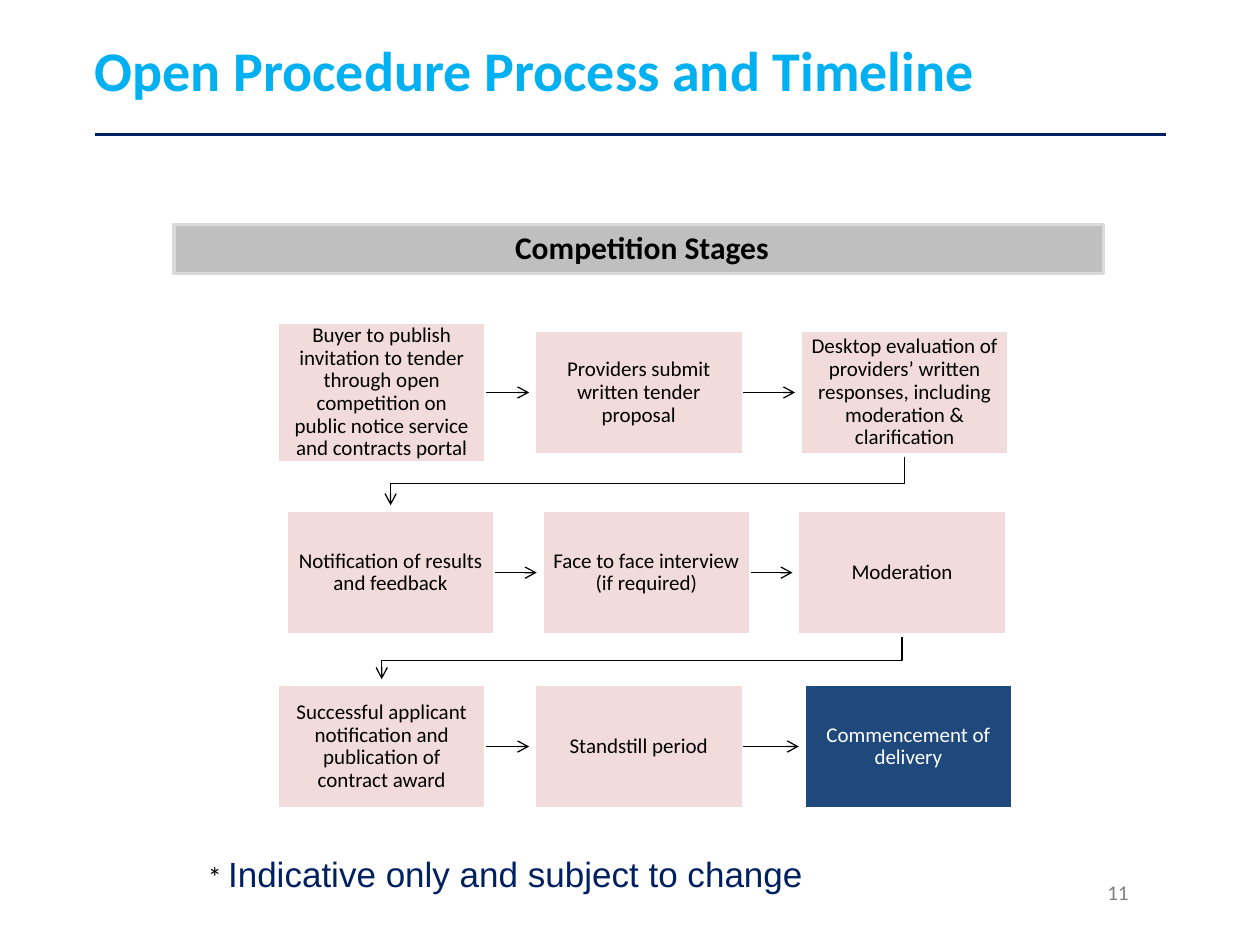
from lxml.etree import SubElement
from pptx import Presentation
from pptx.dml.color import RGBColor
from pptx.enum.shapes import MSO_CONNECTOR as Connector, MSO_SHAPE as Shape
from pptx.enum.text import MSO_ANCHOR as Anchor, MSO_AUTO_SIZE as AutoSize, PP_ALIGN as Align
from pptx.oxml.ns import qn
from pptx.util import Inches, Pt

COLORS = {
    "title": "00B0F0", "navy": "002060", "black": "000000", "white": "FFFFFF",
    "stage": "F2DCDB", "final": "1F497D", "bar": "BFBFBF", "bar_line": "DADADA",
    "number": "808080",
}
SLIDE_WIDTH, SLIDE_HEIGHT = Inches(10), Inches(7.5)
GRID_COLUMNS, GRID_ROWS = 100, 75
STAGE_WIDTH, STAGE_HEIGHT = 16.6, 9.9
ARROW_GAP = 0.4
RIGHT_SIDE = 3

STAGES = [
    (26.2, [
        (22, "Buyer to publish invitation to tender through open competition on "
             "public notice service and contracts portal"),
        (42.4, "Providers submit written tender proposal"),
        (63.5, "Desktop evaluation of providers’ written responses, including "
               "moderation & clarification"),
    ]),
    (40.5, [
        (22.7, "Notification of results and feedback"),
        (43, "Face to face interview (if required)"),
        (63.3, "Moderation"),
    ]),
    (54.3, [
        (22, "Successful applicant notification and publication of contract award"),
        (42.4, "Standstill period"),
        (63.8, "Commencement of delivery"),
    ]),
]
TALL_STAGE, TALL_EXTRA = (0, 0), 1.2
FINAL_STAGE = (2, 2)


def x(column):
    return round(SLIDE_WIDTH * column / GRID_COLUMNS)


def y(row):
    return round(SLIDE_HEIGHT * row / GRID_ROWS)


def area(left, top, width, height):
    return x(left), y(top), x(width), y(height)


def color(name):
    return RGBColor.from_string(COLORS[name])


def set_font(font, size, color_name, bold=False, name="Calibri"):
    font.name, font.size, font.bold = name, Pt(size), bold
    font.color.rgb = color(color_name)


def set_line(line, color_name, width):
    line.color.rgb = color(color_name)
    line.width = Pt(width)


def set_insets(frame, left, top, right, bottom):
    frame.margin_left, frame.margin_right = x(left), x(right)
    frame.margin_top, frame.margin_bottom = y(top), y(bottom)


def add_arrowhead(shape):
    SubElement(shape.line._get_or_add_ln(), qn("a:tailEnd"), type="arrow")


def format_title(slide, text):
    title = slide.shapes.title
    title.left, title.top, title.width, title.height = area(7.5, 1.9, 85, 7.1)
    frame = title.text_frame
    frame.text = text
    frame.vertical_anchor = Anchor.MIDDLE
    set_insets(frame, 0, 0.5, 0.4, 0.5)
    paragraph = frame.paragraphs[0]
    paragraph.alignment = Align.LEFT
    set_font(paragraph.font, 32, "title", bold=True)


def add_line(slide, start, end, color_name, width):
    line = slide.shapes.add_connector(
        Connector.STRAIGHT, x(start[0]), y(start[1]), x(end[0]), y(end[1]))
    set_line(line.line, color_name, width)
    SubElement(line._element.spPr, qn("a:effectLst"))
    return line


def add_rectangle(slide, box, fill, line_color):
    rectangle = slide.shapes.add_shape(Shape.RECTANGLE, *area(*box))
    rectangle.shadow.inherit = False
    rectangle.fill.solid()
    rectangle.fill.fore_color.rgb = color(fill)
    set_line(rectangle.line, line_color, 2)
    return rectangle


def add_stage(slide, box, text, final):
    stage = add_rectangle(slide, box, "final" if final else "stage", "white")
    frame = stage.text_frame
    frame.text = text
    frame.word_wrap = True
    frame.vertical_anchor = Anchor.MIDDLE
    set_insets(frame, 0.9, 0.9, 0.9, 0.9)
    paragraph = frame.paragraphs[0]
    paragraph.alignment = Align.CENTER
    paragraph.line_spacing = 0.9
    set_font(paragraph.font, 12, "white" if final else "black")
    return stage


def add_stage_arrow(slide, stage, start, end):
    arrow = add_line(slide, start, end, "black", 0.75)
    arrow.begin_connect(stage, RIGHT_SIDE)
    add_arrowhead(arrow)


def add_return_arrow(slide, start, end):
    middle = (start[1] + end[1]) / 2 + 0.2
    points = [(start[0], middle), (end[0], middle), end]
    builder = slide.shapes.build_freeform(x(start[0]), y(start[1]))
    builder.add_line_segments([(x(column), y(row)) for column, row in points], close=False)
    arrow = builder.convert_to_shape()
    arrow.shadow.inherit = False
    arrow.fill.background()
    set_line(arrow.line, "black", 0.75)
    add_arrowhead(arrow)


def add_text(slide, box, runs, align=Align.LEFT, wrap=True):
    frame = slide.shapes.add_textbox(*area(*box)).text_frame
    frame.word_wrap = wrap
    frame.auto_size = AutoSize.NONE
    paragraph = frame.paragraphs[0]
    paragraph.alignment = align
    for text, style in runs:
        run = paragraph.add_run()
        run.text = text
        set_font(run.font, **style)
    return frame


def add_stages(slide):
    for row, (top, stages) in enumerate(STAGES):
        center = top + STAGE_HEIGHT / 2
        for column, (left, text) in enumerate(stages):
            extra = TALL_EXTRA if (row, column) == TALL_STAGE else 0
            box = (left, top - extra / 2, STAGE_WIDTH, STAGE_HEIGHT + extra)
            stage = add_stage(slide, box, text, (row, column) == FINAL_STAGE)
            right = left + STAGE_WIDTH
            if column + 1 < len(stages):
                next_left = stages[column + 1][0]
                add_stage_arrow(slide, stage, (right, center), (next_left - ARROW_GAP, center))
            elif row + 1 < len(STAGES):
                next_top, next_stages = STAGES[row + 1]
                half = STAGE_WIDTH / 2
                add_return_arrow(slide, (left + half, top + STAGE_HEIGHT + 0.15),
                                 (next_stages[0][0] + half, next_top - ARROW_GAP))


def main():
    presentation = Presentation()
    presentation.slide_width, presentation.slide_height = SLIDE_WIDTH, SLIDE_HEIGHT
    slide = presentation.slides.add_slide(presentation.slide_layouts[5])
    format_title(slide, "Open Procedure Process and Timeline")
    add_line(slide, (7.5, 10.7), (92.5, 10.7), "navy", 1.5)
    add_stages(slide)
    add_rectangle(slide, (13.8, 17.8, 73.8, 3.9), "bar", "bar_line")
    add_text(slide, (39.8, 17.6, 22.3, 4),
             [("Competition Stages", {"size": 18, "color_name": "black", "bold": True})],
             Align.CENTER, wrap=False)
    add_text(slide, (86.9, 69.3, 5.6, 4), [("11", {"size": 12, "color_name": "number"})])
    note = add_text(slide, (16.1, 67.2, 71.7, 7.1), [
        ("* ", {"size": 16, "color_name": "black"}),
        ("Indicative only and subject to change",
         {"size": 20, "color_name": "navy", "name": "Arial"}),
    ])
    set_insets(note, 0.4, 0.5, 1, 0.5)
    presentation.save("out.pptx")


if __name__ == "__main__":
    main()
